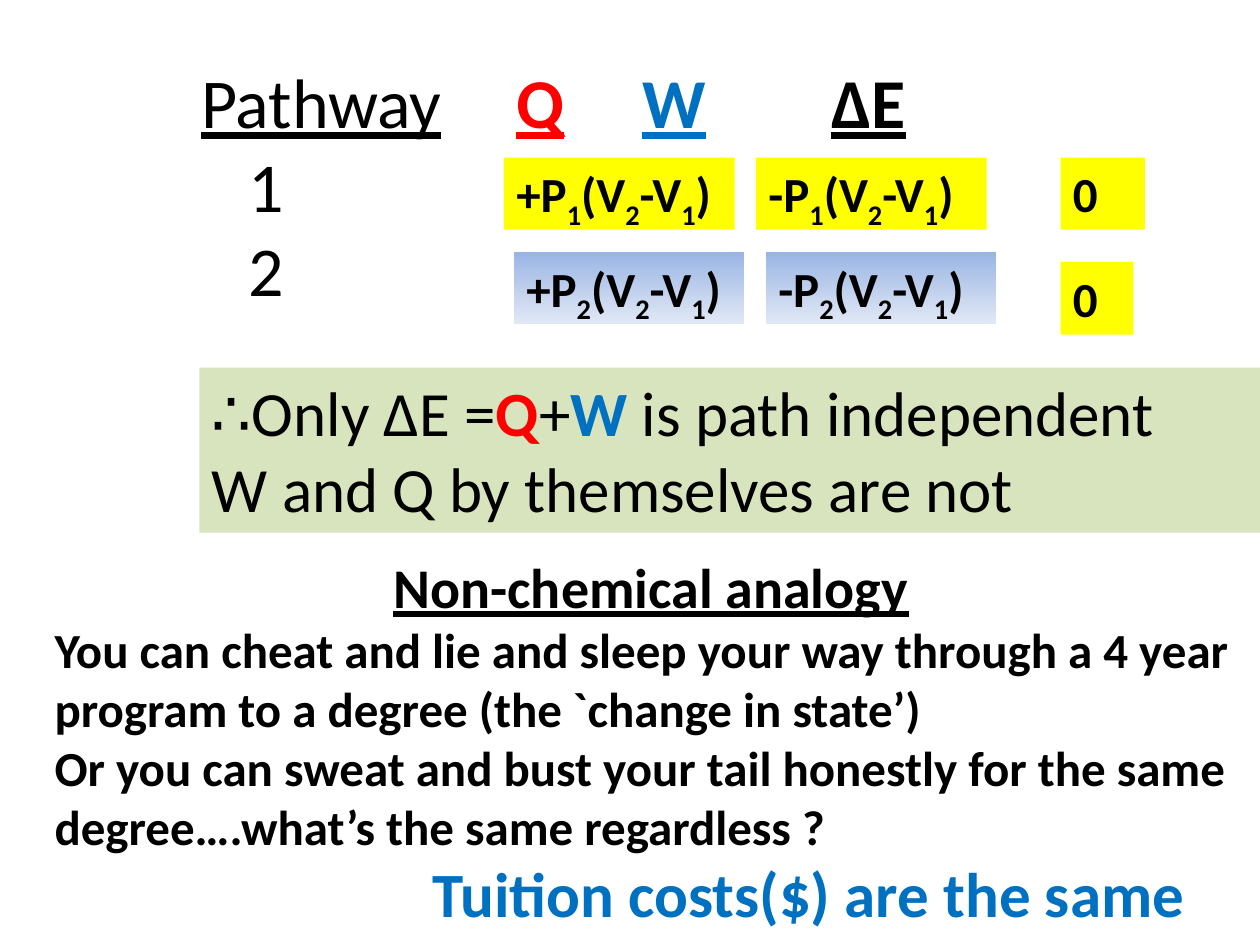
"""Build the slide on path independence of the energy change."""
import itertools

import pptx
import pptx.dml.color
import pptx.enum.text
import pptx.util

Cm = pptx.util.Cm
RED, BLUE, BLACK = "FF0000", "0070C0", "000000"
YELLOW, GREEN, FADE = ["FFFF00"], ["D7E4BD"], ["9AB5E4", "E1E8F5"]
LEFT, CENTER = pptx.enum.text.PP_ALIGN.LEFT, pptx.enum.text.PP_ALIGN.CENTER
UNDER, BOLD = {"underline": True}, {"bold": True}
HEAD = {**UNDER, **BOLD}

PATHWAYS = [
    (0, LEFT, [("Pathway", UNDER), ("\t\t", {}), ("Q", {**HEAD, "color": RED}),
               ("\t\t", {}), ("W", {**HEAD, "color": BLUE}), ("\t\t", {}), ("ΔE", HEAD)]),
    (0.95, LEFT, [("1", {})]),
    (0.95, LEFT, [("2", {})]),
]
CONCLUSION = [
    (0, LEFT, [("∴Only ΔE =", {}), ("Q", {**BOLD, "color": RED}), ("+", {}),
               ("W", {**BOLD, "color": BLUE}), (" is path independent", {})]),
    (0, LEFT, [("W and Q by themselves are not", {})]),
]
ANALOGY = [
    (0, CENTER, [("Non-chemical analogy", {**HEAD, "size": 32})]),
    (0, LEFT, [("You can cheat and lie and sleep your way through a 4 year program "
                "to a degree (the `change in state’)", BOLD)]),
    (0, LEFT, [("Or you can sweat and bust your tail honestly for the same "
                "degree….what’s the same regardless ?", BOLD)]),
    (7.62, LEFT, [("Tuition costs($) are the same", {**BOLD, "size": 36, "color": BLUE})]),
]
ROWS = [
    (3.18, 10.16, 1.7, 1.45, YELLOW, "P1(V2-V1)"),
    (5.08, 10.36, 1.47, 1.47, FADE, "P2(V2-V1)"),
]
ZERO_TOPS = (3.18, 5.28)
COLUMN_GAP = 5.08


def rgb(value):
    return pptx.dml.color.RGBColor.from_string(value)


def add_run(p, text, size, fmt):
    r = p.add_run()
    r.text = text
    values = {"name": "Calibri", "size": size, "bold": False, "color": BLACK, **fmt}
    r.font.color.rgb = rgb(values.pop("color"))
    values["size"] = pptx.util.Pt(values["size"])
    if "baseline" in values:
        r._r.get_or_add_rPr().set("baseline", values.pop("baseline"))
    for key, value in values.items():
        setattr(r.font, key, value)


def add_box(s, place, paragraphs, size, colors=()):
    sp = s.shapes.add_textbox(*map(Cm, place))
    if len(colors) == 1:
        sp.fill.solid()
        sp.fill.fore_color.rgb = rgb(colors[0])
    elif colors:
        sp.fill.gradient()
        sp.fill.gradient_angle = 270
        for stop, color in zip(sp.fill.gradient_stops, colors):
            stop.color.rgb = rgb(color)
    tf = sp.text_frame
    tf.word_wrap = True
    for i, (indent, align, runs) in enumerate(paragraphs):
        p = tf.add_paragraph() if i else tf.paragraphs[0]
        p.alignment = align
        if indent:
            p._p.get_or_add_pPr().set("marL", str(Cm(indent)))
        for text, fmt in runs:
            add_run(p, text, size, fmt)


def formula(text):
    runs = []
    for digit, chars in itertools.groupby(text, str.isdigit):
        runs.append(("".join(chars), {**BOLD, "baseline": "-25000"} if digit else BOLD))
    return [(0, LEFT, runs)]


def main():
    prs = pptx.Presentation()
    prs.slide_width, prs.slide_height = Cm(25.4), Cm(19.05)
    s = prs.slides.add_slide(prs.slide_layouts[6])
    add_box(s, (3.81, 1.06, 20.75, 5.38), PATHWAYS, 40)
    for (top, left, zero_width, height, colors, work), zero_top in zip(ROWS, ZERO_TOPS):
        for i, sign in enumerate("+-"):
            place = (left + i * COLUMN_GAP, top, 4.65, 1.45)
            add_box(s, place, formula(sign + work), 28, colors)
        add_box(s, (21.38, zero_top, zero_width, height), [(0, LEFT, [("0", BOLD)])], 28, YELLOW)
    add_box(s, (4.02, 7.41, 21.38, 3.33), CONCLUSION, 36, GREEN)
    add_box(s, (0.85, 11.01, 24.55, 9.5), ANALOGY, 28)
    prs.save("out.pptx")


if __name__ == "__main__":
    main()
